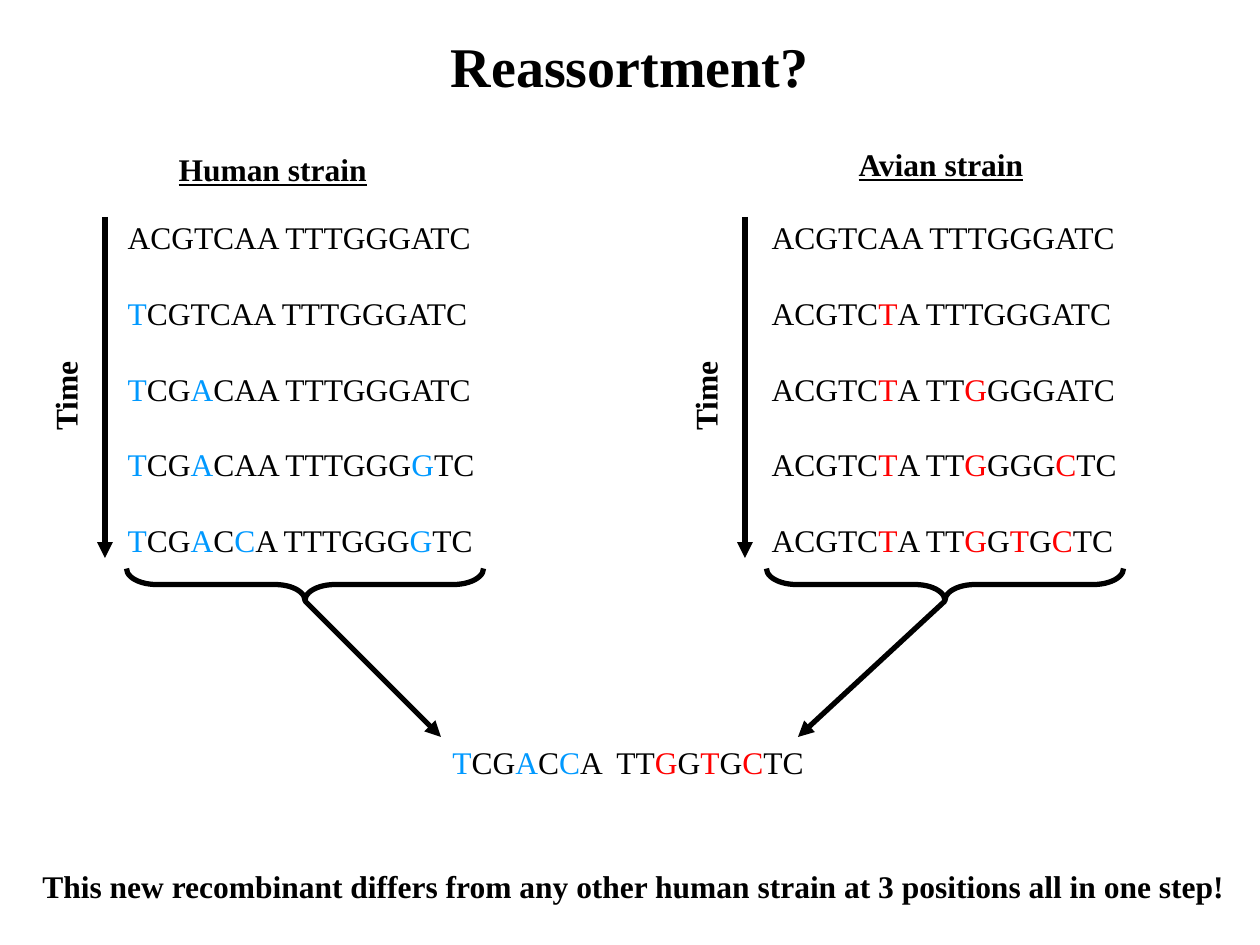
from itertools import groupby
from lxml.etree import SubElement
from pptx import Presentation
from pptx.dml.color import RGBColor
from pptx.enum.shapes import MSO_CONNECTOR as Connector, MSO_SHAPE as Shape
from pptx.enum.text import MSO_ANCHOR as Anchor, MSO_AUTO_SIZE as AutoSize, PP_ALIGN as Align
from pptx.oxml.ns import qn
from pptx.util import Pt

PX = 914400 // 126
FONT = "Times New Roman"
COLORS = {"ink": "000000", "human": "0099FF", "avian": "FF0000"}

TITLE = "Reassortment?"
ANCESTOR = ("ACGTCAA", "TTTGGGATC")
STRAINS = [
    {
        "name": "human",
        "heading": "Human strain",
        "heading_box": (166, 144, 230, 50),
        "left": 0,
        "text_left": 115,
        "arrow_end": 441,
        "sequences": [
            "ACGTCAA TTTGGGATC",
            "TCGTCAA TTTGGGATC",
            "TCGACAA TTTGGGATC",
            "TCGACAA TTTGGGGTC",
            "TCGACCA TTTGGGGTC",
        ],
    },
    {
        "name": "avian",
        "heading": "Avian strain",
        "heading_box": (846, 139, 210, 50),
        "left": 640,
        "text_left": 759,
        "arrow_end": 798,
        "sequences": [
            "ACGTCAA TTTGGGATC",
            "ACGTCTA TTTGGGATC",
            "ACGTCTA TTGGGGATC",
            "ACGTCTA TTGGGGCTC",
            "ACGTCTA TTGGTGCTC",
        ],
    },
]
RECOMBINANT = [("TCGACCA", "human"), ("TTGGTGCTC", "avian")]
CONCLUSION = "This new recombinant differs from any other human strain at 3 positions all in one step!"


def px(*lengths):
    return [length * PX for length in lengths]


def color(name):
    return RGBColor.from_string(COLORS[name])


def place(shape, box):
    shape.left, shape.top, shape.width, shape.height = px(*box)


def prepare(shape, wrap=False):
    frame = shape.text_frame
    frame.word_wrap = wrap
    frame.auto_size = AutoSize.NONE
    frame.vertical_anchor = Anchor.TOP
    return frame


def style(span, size=18, bold=False, underline=False, tint="ink"):
    span.font.name = FONT
    span.font.size = Pt(size)
    span.font.bold = bold
    span.font.underline = underline
    span.font.color.rgb = color(tint)


def write(shape, text, wrap=False, **look):
    frame = prepare(shape, wrap)
    frame.text = text
    para = frame.paragraphs[0]
    para.space_before = Pt(0)
    style(para.runs[0], **look)
    return para


def write_sequence(para, parts, gap=" "):
    letters = []
    for (part, strain), origin in zip(parts, ANCESTOR):
        if letters:
            letters += [(gap, "ink")]
        letters += [(base, "ink" if base == old else strain) for base, old in zip(part, origin)]
    for tint, group in groupby(letters, key=lambda letter: letter[1]):
        span = para.add_run()
        span.text = "".join(base for base, _ in group)
        style(span, tint=tint)


def remove_bullet(para):
    properties = para._p.get_or_add_pPr()
    properties.set("marL", "0")
    properties.set("indent", "0")
    SubElement(properties, qn("a:buNone"))


def add_text(box):
    return page.shapes.add_textbox(*px(*box))


def add_arrow(start, end):
    arrow = page.shapes.add_connector(Connector.STRAIGHT, *px(*start, *end))
    arrow.line.color.rgb = color("ink")
    arrow.line.width = Pt(3)
    SubElement(arrow.line._get_or_add_ln(), qn("a:tailEnd"), type="triangle")
    SubElement(arrow._element.spPr, qn("a:effectLst"))


def add_brace(box):
    brace = page.shapes.add_shape(Shape.LEFT_BRACE, *px(*box))
    brace.rotation = 270
    brace.adjustments[0] = 0.94
    brace.shadow.inherit = False
    brace.fill.background()
    brace.line.color.rgb = color("ink")
    brace.line.width = Pt(3)


def add_strain(strain, heading, body):
    left = strain["left"]
    place(heading, strain["heading_box"])
    write(heading, strain["heading"], bold=True, underline=True)

    place(body, (strain["text_left"], 212, 390, 353))
    frame = prepare(body)
    for row, sequence in enumerate(strain["sequences"]):
        para = frame.add_paragraph() if row else frame.paragraphs[0]
        para.space_before = Pt(21.6 if row else 0)
        remove_bullet(para)
        write_sequence(para, [(part, strain["name"]) for part in sequence.split()])

    time = add_text((left + 17, 370, 96, 50))
    time.rotation = 270
    write(time, "Time", bold=True)
    add_arrow((left + 105, 217), (left + 105, 558))
    add_brace((left + 289, 406, 32, 357))
    add_arrow((left + 305, 601), (strain["arrow_end"], 737))


deck = Presentation()
deck.slide_width, deck.slide_height = px(1260, 945)
page = deck.slides.add_slide(deck.slide_layouts.get_by_name("Comparison"))
title, *slots = page.placeholders

place(title, (0, 25, 1260, 79))
write(title, TITLE, wrap=True, size=32, bold=True).alignment = Align.CENTER

for strain, heading, body in zip(STRAINS, slots[::2], slots[1::2]):
    add_strain(strain, heading, body)

recombinant = prepare(add_text((440, 737, 379, 50)))
write_sequence(recombinant.paragraphs[0], RECOMBINANT, gap="  ")
write(add_text((30, 861, 1210, 50)), CONCLUSION, bold=True)

deck.save("out.pptx")
